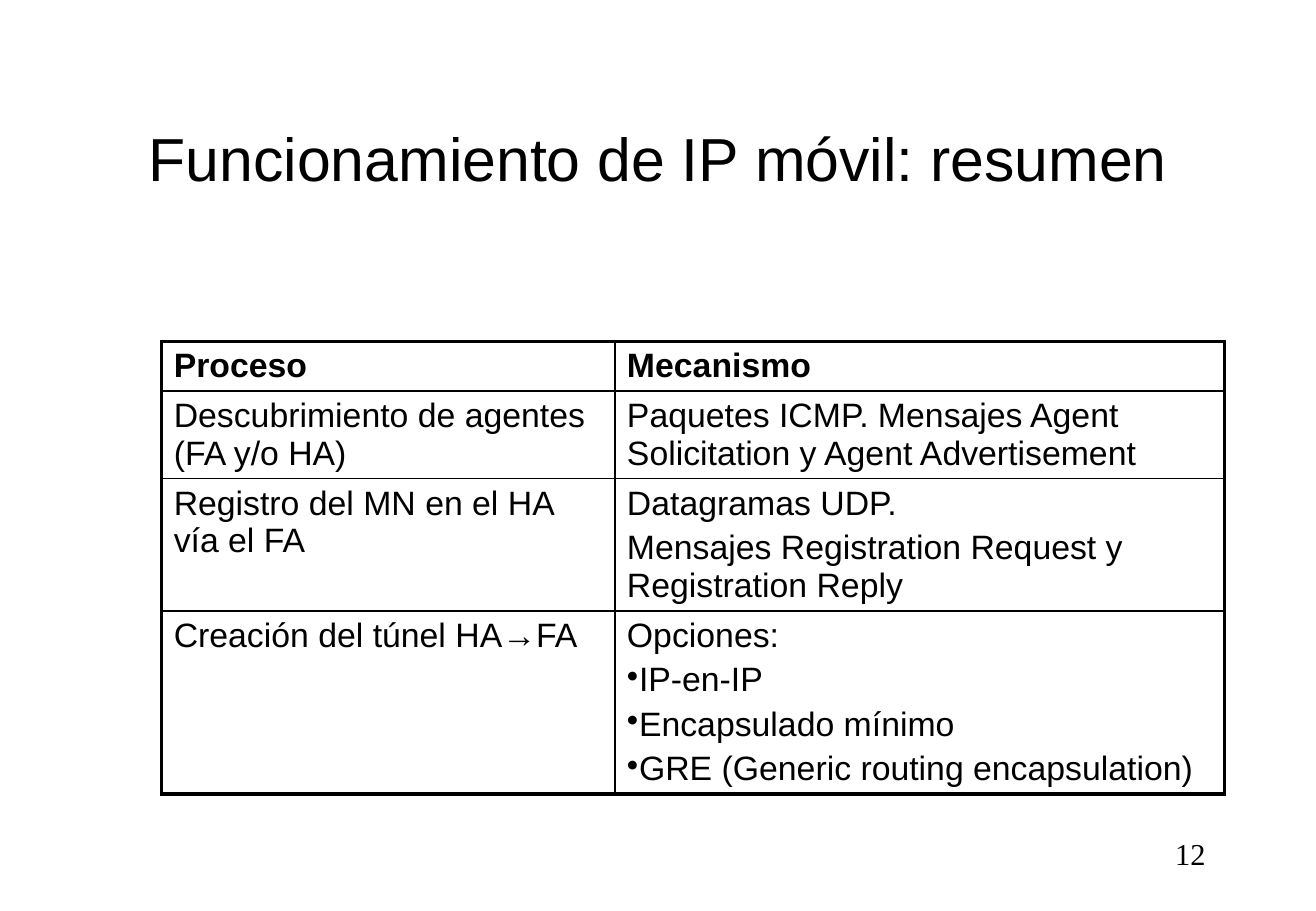
from dataclasses import dataclass

from pptx import Presentation
from pptx.dml.color import RGBColor
from pptx.enum.text import MSO_ANCHOR, PP_ALIGN
from pptx.oxml.ns import qn
from pptx.util import Inches, Pt
from lxml.etree import SubElement


@dataclass(frozen=True)
class Theme:
    ink: str = "000000"
    sans: str = "Arial"
    serif: str = "Times New Roman"
    title_size: int = 36
    table_size: int = 20
    number_size: int = 18
    para_gap: int = 4
    outer_line: float = 2.25
    inner_line: float = 1


class SlideBuilder:
    def __init__(self, prs, theme):
        self.theme = theme
        self.s = prs.slides.add_slide(prs.slide_layouts[5])

    def add_run(self, p, text, size, font, bold=False):
        r = p.add_run()
        r.text = text
        r.font.size = Pt(size)
        r.font.name = font
        r.font.bold = bold
        r.font.color.rgb = RGBColor.from_string(self.theme.ink)

    def place(self, sp, box):
        sp.left, sp.top, sp.width, sp.height = map(Inches, box)

    def title(self, text, box):
        sp = self.s.shapes.title
        self.place(sp, box)
        tf = sp.text_frame
        tf.vertical_anchor = MSO_ANCHOR.MIDDLE
        p = tf.paragraphs[0]
        p.alignment = PP_ALIGN.CENTER
        self.add_run(p, text, self.theme.title_size, self.theme.sans)

    def page_number(self, text, box):
        tf = self.s.shapes.add_textbox(*map(Inches, box)).text_frame
        tf.word_wrap = True
        p = tf.paragraphs[0]
        p.alignment = PP_ALIGN.RIGHT
        self.add_run(p, text, self.theme.number_size, self.theme.serif)

    def bullet(self, p):
        pPr = p._p.get_or_add_pPr()
        pPr.set("marL", "0")
        pPr.set("indent", "0")
        SubElement(pPr, qn("a:buChar"), char="•")

    def borders(self, cell, outer_sides):
        tcPr = cell._tc.get_or_add_tcPr()
        for side in "LRTB":
            width = self.theme.outer_line if side in outer_sides else self.theme.inner_line
            ln = SubElement(tcPr, qn(f"a:ln{side}"), w=str(Pt(width)))
            fill = SubElement(ln, qn("a:solidFill"))
            SubElement(fill, qn("a:srgbClr"), val=self.theme.ink)

    def cell_text(self, cell, lines, bold):
        tf = cell.text_frame
        for i, line in enumerate(lines):
            p = tf.add_paragraph() if i else tf.paragraphs[0]
            p.space_before = Pt(self.theme.para_gap if i else 0)
            if line.startswith("•"):
                self.bullet(p)
            self.add_run(p, line.lstrip("•"), self.theme.table_size, self.theme.sans, bold)

    def table(self, rows, left, top, widths, heights):
        frame = self.s.shapes.add_table(
            len(rows), len(widths), Inches(left), Inches(top),
            Inches(sum(widths)), Inches(sum(heights)))
        tbl = frame.table
        tbl.first_row = tbl.horz_banding = False
        for col, width in zip(tbl.columns, widths):
            col.width = Inches(width)
        for row, height in zip(tbl.rows, heights):
            row.height = Inches(height)
        last_row, last_col = len(rows) - 1, len(widths) - 1
        for i, row in enumerate(rows):
            for j, lines in enumerate(row):
                cell = tbl.cell(i, j)
                edges = {"L": j == 0, "R": j == last_col, "T": i == 0, "B": i == last_row}
                self.borders(cell, [side for side, outer in edges.items() if outer])
                cell.fill.background()
                self.cell_text(cell, lines, bold=i == 0)


# Each cell is a list of paragraphs; a leading • marks a bullet
PROCESSES = [
    (["Proceso"], ["Mecanismo"]),
    (["Descubrimiento de agentes (FA y/o HA)"],
     ["Paquetes ICMP. Mensajes Agent Solicitation y Agent Advertisement"]),
    (["Registro del MN en el HA vía el FA"],
     ["Datagramas UDP.", "Mensajes Registration Request y Registration Reply"]),
    (["Creación del túnel HA→FA"],
     ["Opciones:", "•IP-en-IP", "•Encapsulado mínimo",
      "•GRE (Generic routing encapsulation)"]),
]


def main():
    prs = Presentation()
    prs.slide_width, prs.slide_height = Inches(10.83), Inches(7.5)
    slide = SlideBuilder(prs, Theme())

    # Heading
    slide.title("Funcionamiento de IP móvil: resumen", (0.81, 0.67, 9.21, 1.25))

    # Summary of processes and mechanisms
    slide.table(PROCESSES, 1.33, 2.81, widths=[3.73, 5.02], heights=[0.4, 0.72, 1.09, 1.5])

    # Page number
    slide.page_number("12", (7.76, 6.83, 2.26, 0.5))

    prs.save("out.pptx")


if __name__ == "__main__":
    main()
